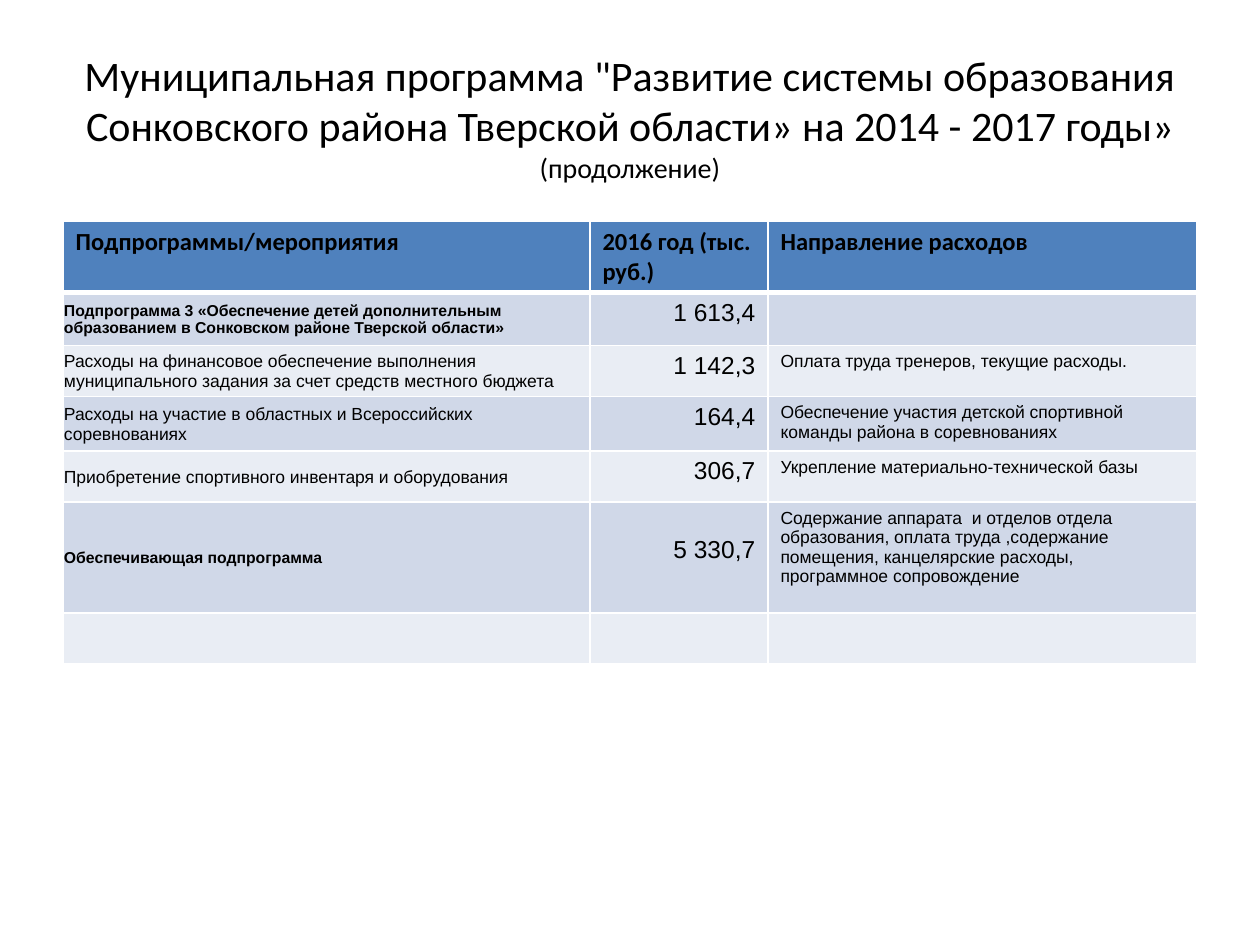
from lxml import etree
from pptx import Presentation
from pptx.dml.color import RGBColor
from pptx.enum.text import MSO_ANCHOR, PP_ALIGN
from pptx.oxml.ns import qn
from pptx.util import Pt

LEFT, CENTER, RIGHT = PP_ALIGN.LEFT, PP_ALIGN.CENTER, PP_ALIGN.RIGHT
TOP, MIDDLE = MSO_ANCHOR.TOP, MSO_ANCHOR.MIDDLE
BLACK = RGBColor(0x00, 0x00, 0x00)
WHITE = RGBColor(0xFF, 0xFF, 0xFF)
HEADER_BLUE = RGBColor(0x4F, 0x81, 0xBD)
BANDS = [RGBColor(0xD0, 0xD8, 0xE8), RGBColor(0xE9, 0xED, 0xF4)]

# Content
TITLE = [
    ('Муниципальная программа "Развитие системы образования Сонковского района '
     'Тверской области» на 2014 - 2017 годы» ', 24),
    ("(продолжение)", 16),
]
HEADER = ["Подпрограммы/мероприятия", "2016 год (тыс. руб.)", "Направление расходов"]
ROWS = [
    ("Подпрограмма 3 «Обеспечение детей дополнительным образованием "
     "в Сонковском районе Тверской области»", "1 613,4", ""),
    ("Расходы на финансовое обеспечение выполнения муниципального задания "
     "за счет средств местного бюджета", "1 142,3", "Оплата труда тренеров, текущие расходы."),
    ("Расходы на участие в областных и Всероссийских соревнованиях", "164,4",
     "Обеспечение участия детской спортивной команды района в соревнованиях"),
    ("Приобретение спортивного инвентаря и оборудования", "306,7",
     "Укрепление материально-технической базы"),
    ("Обеспечивающая подпрограмма", "5 330,7",
     "Содержание аппарата  и отделов отдела образования, оплата труда ,содержание "
     "помещения, канцелярские расходы, программное сопровождение"),
    ("", "", ""),
]
SUBPROGRAMS = (1, 5)
LOWERED_AMOUNT = 5

# Layout in px, 126 to the inch
PX = 914400 // 126
COLUMNS = [527, 178, 429]
HEIGHTS = [70, 53, 51, 52, 51, 111, 50]
TITLE_BOX = (63, 38, 1134, 157)
TABLE_BOX = (63, 221, sum(COLUMNS), sum(HEIGHTS))


def scaled(lengths):
    return [length * PX for length in lengths]


def add_span(para, text, font, size, bold=False):
    span = para.add_run()
    span.text = text
    span.font.color.rgb = BLACK
    for name, value in {"name": font, "size": Pt(size), "bold": bold}.items():
        setattr(span.font, name, value)


def set_border(cell, side, points):
    line = etree.SubElement(cell._tc.get_or_add_tcPr(), qn(f"a:ln{side}"), w=str(Pt(points)))
    fill = etree.SubElement(line, qn("a:solidFill"))
    etree.SubElement(fill, qn("a:srgbClr"), val=str(WHITE))


def cell_format(row, column):
    """Return font, size, bold, alignment and cell settings."""
    if row == 0:
        return "Calibri", 14, True, LEFT, {}
    if column == 0:
        subprogram = row in SUBPROGRAMS
        tight = {"margin_left": PX, "margin_right": PX, "margin_top": PX,
                 "margin_bottom": 0, "vertical_anchor": MIDDLE}
        return "Arial", 9 if subprogram else 10, subprogram, LEFT, tight
    if column == 1:
        lowered = {"margin_top": 34 * PX} if row == LOWERED_AMOUNT else {}
        return "Arial", 14, False, RIGHT, lowered
    return "Arial", 10, False, LEFT, {}


def fill_cell(cell, row, column, text):
    font, size, bold, alignment, settings = cell_format(row, column)
    for name, value in {"vertical_anchor": TOP, **settings}.items():
        setattr(cell, name, value)
    for side in "LRTB":
        under_header = (row, side) in ((0, "B"), (1, "T"))
        set_border(cell, side, 3 if under_header else 1)
    cell.fill.solid()
    cell.fill.fore_color.rgb = BANDS[(row - 1) % 2] if row else HEADER_BLUE
    para = cell.text_frame.paragraphs[0]
    para.alignment = alignment
    if text:
        add_span(para, text, font, size, bold)


def main():
    deck = Presentation()
    deck.slide_width, deck.slide_height = scaled((1260, 945))
    page = deck.slides.add_slide(deck.slide_layouts[6])

    # Title
    frame = page.shapes.add_textbox(*scaled(TITLE_BOX)).text_frame
    frame.word_wrap = True
    frame.vertical_anchor = MIDDLE
    para = frame.paragraphs[0]
    para.alignment = CENTER
    for text, size in TITLE:
        add_span(para, text, "Calibri", size)

    # Expenditure table
    table = page.shapes.add_table(len(HEIGHTS), len(COLUMNS), *scaled(TABLE_BOX)).table
    for column, width in zip(table.columns, scaled(COLUMNS)):
        column.width = width
    for row, height in zip(table.rows, scaled(HEIGHTS)):
        row.height = height
    for r, texts in enumerate([HEADER, *ROWS]):
        for c, text in enumerate(texts):
            fill_cell(table.cell(r, c), r, c, text)

    deck.save("out.pptx")


if __name__ == "__main__":
    main()
